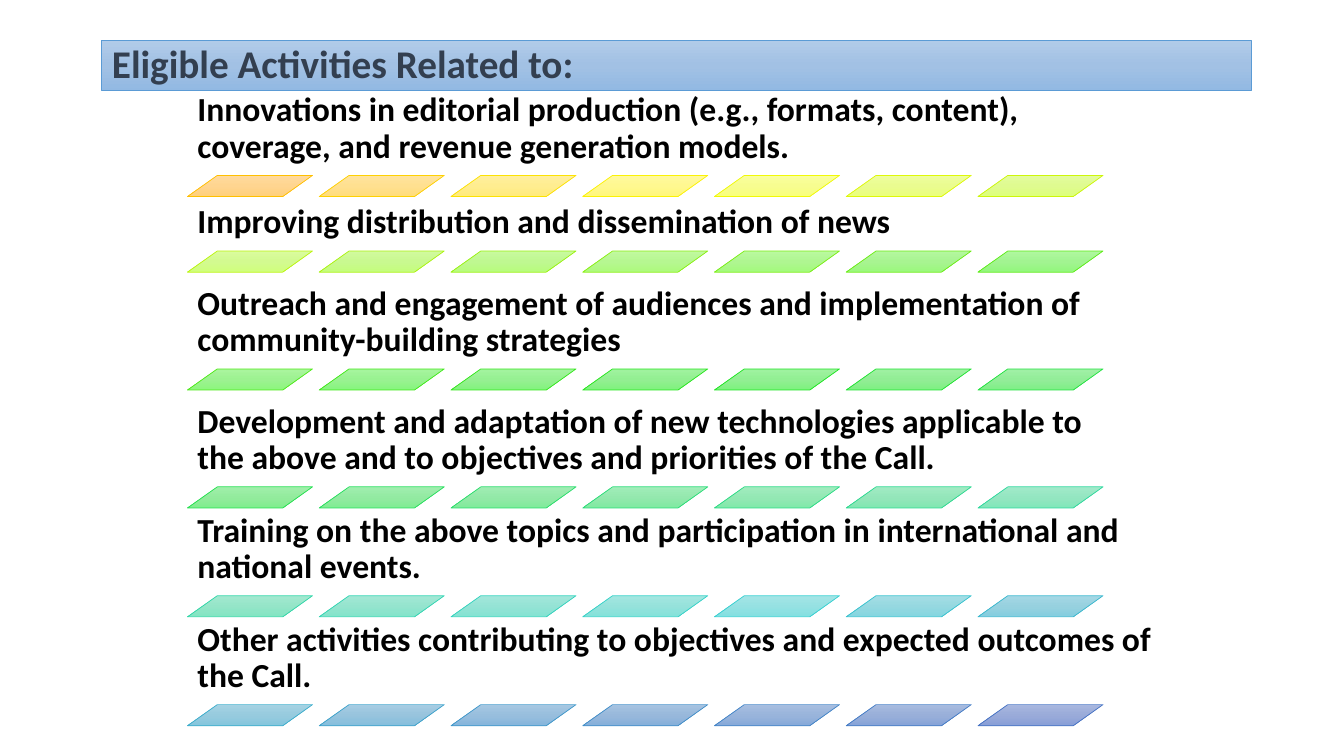
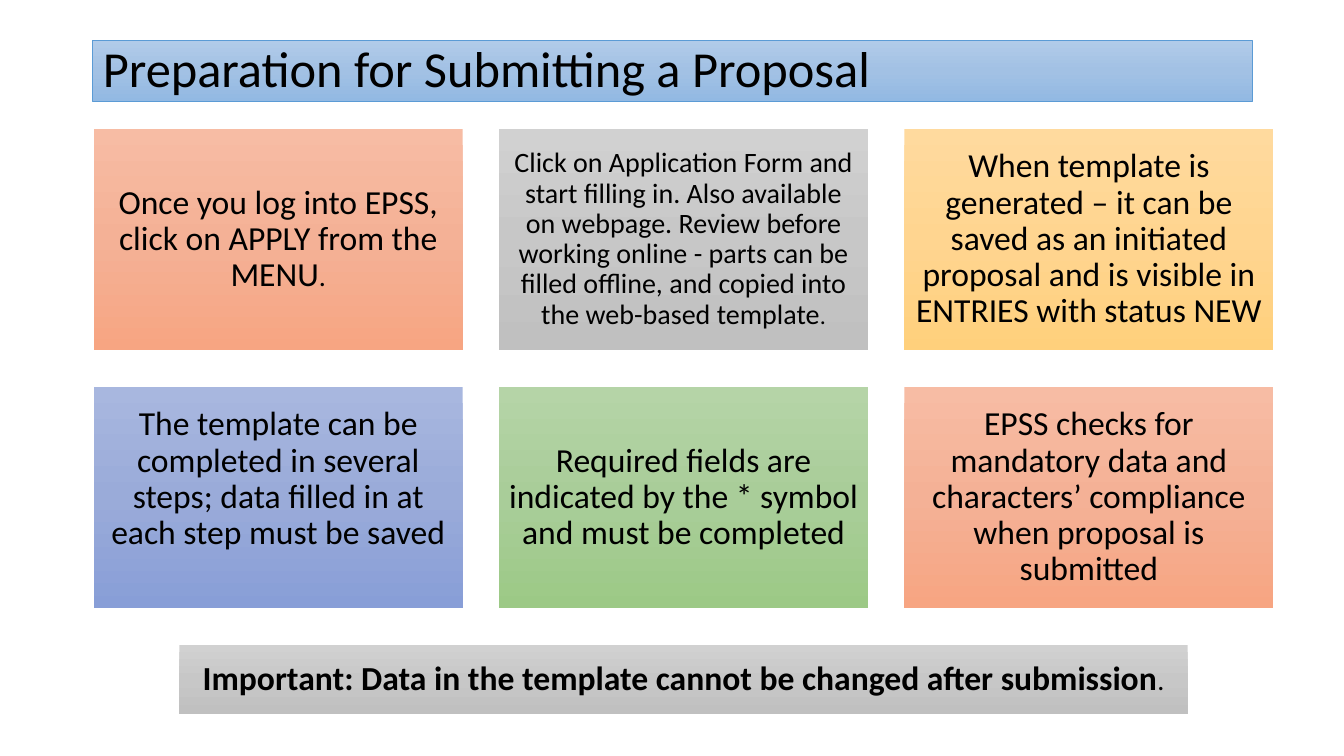
from colorsys import hls_to_rgb, rgb_to_hls

from lxml.etree import SubElement
from pptx import Presentation
from pptx.dml.color import RGBColor
from pptx.enum.shapes import MSO_SHAPE
from pptx.enum.text import MSO_ANCHOR, MSO_AUTO_SIZE, PP_ALIGN
from pptx.oxml.ns import qn
from pptx.util import Inches, Pt

FONT = "Calibri"
BLACK = RGBColor(0x00, 0x00, 0x00)
SLATE = RGBColor(0x33, 0x3F, 0x50)
SKY = RGBColor(0x5B, 0x9B, 0xD5)
ORANGE = RGBColor(0xED, 0x7D, 0x31)
GRAY = RGBColor(0xA5, 0xA5, 0xA5)
GOLD = RGBColor(0xFF, 0xC0, 0x00)
BLUE = RGBColor(0x44, 0x72, 0xC4)
GREEN = RGBColor(0x70, 0xAD, 0x47)

# Gradient stops as position, lumMod, satMod, tint, all in percent
SOFT_STOPS = [(0, 110, 105, 67), (50, 105, 103, 73), (100, 105, 109, 81)]

ACTIVITIES_TITLE = "Eligible Activities Related to:"
# Text, box width, box height
ACTIVITIES = [
    ("Innovations in editorial production (e.g., formats, content), coverage, "
     "and revenue generation models.", 8.98, 0.84),
    ("Improving distribution and dissemination of news", 9.94, 0.42),
    ("Outreach and engagement of audiences and implementation of "
     "community-building strategies", 9.64, 0.84),
    ("Development and adaptation of new technologies applicable to the above "
     "and to objectives and priorities of the Call.", 9.06, 0.84),
    ("Training on the above topics and participation in international and "
     "national events.", 9.75, 0.75),
    ("Other activities contributing to objectives and expected outcomes of "
     "the Call.", 9.96, 0.75),
]
BARS_PER_ROW = 7

STEPS_TITLE = "Preparation for Submitting a Proposal"
# Colour, runs as (text, size), bottom inset
STEPS = [
    (ORANGE, [("Once you log into EPSS, click on APPLY from the MENU", 24),
              (".", 20)], 0.1),
    (GRAY, [("Click on Application Form and start filling in. Also available on "
             "webpage. Review before working online - parts can be filled "
             "offline, and copied into the web-based template", 20),
            (".", 17)], 0.1),
    (GOLD, [("When template is generated – it can be saved as an initiated "
             "proposal and is visible in ENTRIES with status NEW", 24)], 0.1),
    (BLUE, [("The template can be completed in several steps; data filled in at "
             "each step must be saved", 24)], 0.46),
    (GREEN, [("Required fields are indicated by the * symbol and must be "
              "completed", 24)], 0.1),
    (ORANGE, [("EPSS checks for mandatory data and characters’ compliance when "
               "proposal is submitted", 24)], 0.1),
]
STEP_COLUMNS = 3
WARNING = [("Important: Data in the template cannot be changed after submission",
            24, True), (".", 20)]


def blend(start, end, t):
    """Colour at share t of the way from start to end, by hue, light and saturation."""
    a, b = (rgb_to_hls(*(v / 255 for v in c)) for c in (start, end))
    mixed = hls_to_rgb(*(x + (y - x) * t for x, y in zip(a, b)))
    return RGBColor(*(round(v * 255) for v in mixed))


def paint(sp, color, outlined=False):
    """Soft vertical gradient made from one colour, with an optional thin outline."""
    sp.shadow.inherit = False
    sp.fill.gradient()
    sp.fill.gradient_angle = 270
    stops = next(sp.element.spPr.iter(qn("a:gsLst")))
    stops[:] = []
    for pos, *percents in SOFT_STOPS:
        gs = SubElement(stops, qn("a:gs"), pos=str(pos * 1000))
        clr = SubElement(gs, qn("a:srgbClr"), val=str(color))
        for name, percent in zip(("lumMod", "satMod", "tint"), percents):
            SubElement(clr, qn(f"a:{name}"), val=str(percent * 1000))
    if outlined:
        sp.line.color.rgb = color
        sp.line.width = Pt(0.5)
    else:
        sp.line.fill.background()


def write(sp, runs, anchor, align=PP_ALIGN.LEFT, color=BLACK, insets=None):
    """Fill a shape with one paragraph of (text, size, bold) runs."""
    tf = sp.text_frame
    frame = {"word_wrap": True, "auto_size": MSO_AUTO_SIZE.NONE,
             "vertical_anchor": anchor}
    for side, inset in zip(("left", "top", "right", "bottom"), insets or ()):
        frame[f"margin_{side}"] = Inches(inset)
    for name, value in frame.items():
        setattr(tf, name, value)
    p = tf.paragraphs[0]
    p.alignment, p.line_spacing = align, 0.9
    for text, size, *bold in runs:
        r = p.add_run()
        r.text = text
        for name, value in {"name": FONT, "size": Pt(size), "bold": bool(bold)}.items():
            setattr(r.font, name, value)
        r.font.color.rgb = color


def add_titled_slide(prs, run, box, color):
    s = prs.slides.add_slide(prs.slide_layouts[5])
    title = s.shapes.title
    title.left, title.top, title.width, title.height = map(Inches, box)
    paint(title, SKY, outlined=True)
    write(title, [run], MSO_ANCHOR.MIDDLE, color=color)
    return s


def add_card(s, box, color, runs, bottom=0.1):
    sp = s.shapes.add_shape(MSO_SHAPE.RECTANGLE, *map(Inches, box))
    paint(sp, color)
    write(sp, runs, MSO_ANCHOR.MIDDLE, PP_ALIGN.CENTER,
          insets=(0.1, 0.1, 0.1, bottom))


def build_activities(prs):
    s = add_titled_slide(prs, (ACTIVITIES_TITLE, 28, True),
                         (1.01, 0.4, 11.4, 0.5), SLATE)
    left, top, bar_height, gap = 1.86, 0.9, 0.21, 0.12
    pitch = 7.84 / (BARS_PER_ROW - 1)
    last = len(ACTIVITIES) * BARS_PER_ROW - 1
    for row, (text, width, height) in enumerate(ACTIVITIES):
        tb = s.shapes.add_textbox(*map(Inches, (left, top, width, height)))
        write(tb, [(text, 24, True)], MSO_ANCHOR.BOTTOM, insets=(0.1,) * 4)
        top += height
        for col in range(BARS_PER_ROW):
            bar = s.shapes.add_shape(
                MSO_SHAPE.PARALLELOGRAM,
                *map(Inches, (left + col * pitch, top, 1.24, bar_height)))
            bar.adjustments[0] = 1.41
            paint(bar, blend(GOLD, BLUE, (row * BARS_PER_ROW + col) / last),
                  outlined=True)
        top += bar_height + gap


def build_steps(prs):
    s = add_titled_slide(prs, (STEPS_TITLE, 36), (0.92, 0.4, 11.5, 0.61), BLACK)
    width, height, gap = 3.66, 2.19, 0.37
    for i, (color, runs, bottom) in enumerate(STEPS):
        row, col = divmod(i, STEP_COLUMNS)
        box = (0.93 + col * (width + gap - 0.01), 1.28 + row * (height + gap),
               width, height)
        add_card(s, box, color, runs, bottom)
    add_card(s, (1.78, 6.4, 10, 0.68), GRAY, WARNING)


def main():
    prs = Presentation()
    prs.slide_width, prs.slide_height = Inches(13.33), Inches(7.5)
    build_activities(prs)
    build_steps(prs)
    prs.save("out.pptx")


if __name__ == "__main__":
    main()
